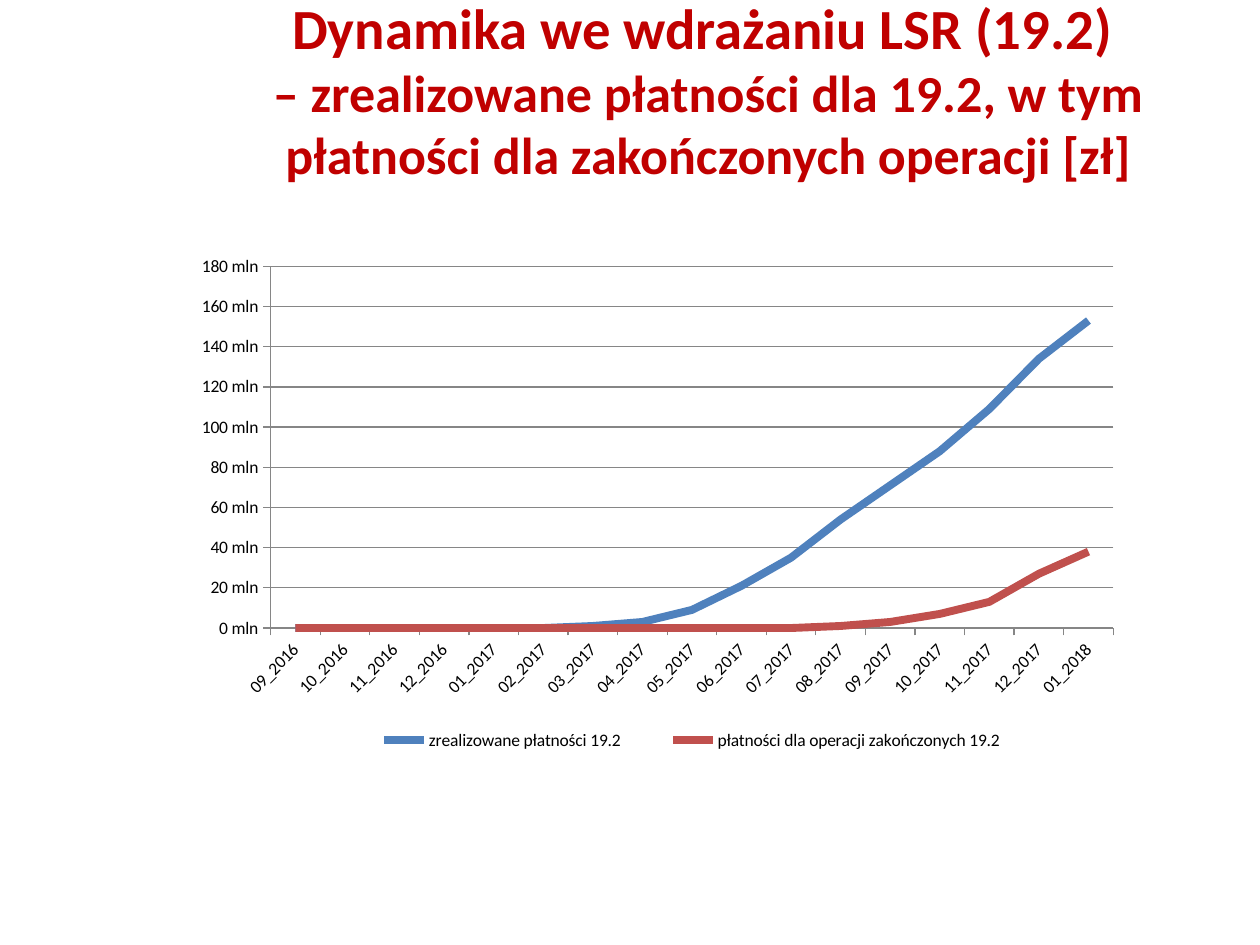
import pptx
import pptx.chart.data
import pptx.dml.color
import pptx.enum.chart
import pptx.enum.text
import pptx.oxml
import pptx.oxml.ns
import pptx.util
from pptx.util import Inches

TITLE_LEAD = "Dynamika we wdrażaniu LSR (19.2) "
TITLE_REST = "– zrealizowane płatności dla 19.2, w tym płatności dla zakończonych operacji [zł]"

MONTHS = [
    "09_2016", "10_2016", "11_2016", "12_2016", "01_2017", "02_2017",
    "03_2017", "04_2017", "05_2017", "06_2017", "07_2017", "08_2017",
    "09_2017", "10_2017", "11_2017", "12_2017", "01_2018",
]
MILLION = 1_000_000
PAYMENTS = [  # name, values in millions, theme colour
    ("zrealizowane płatności 19.2",
     [0, 0, 0, 0, 0, 0, 1, 3, 9, 21, 35, 54, 71, 88, 109, 134, 153], "all_paid"),
    ("płatności dla operacji zakończonych 19.2",
     [0, 0, 0, 0, 0, 0, 0, 0, 0, 0, 0, 1, 3, 7, 13, 27, 38], "completed"),
]

THEME = {
    "font": "Calibri",
    "title": "C00000", "text": "000000", "grid": "868686",
    "all_paid": "4F81BD", "completed": "C0504D",
    "lead_size": 32.4, "rest_size": 29.7, "chart_size": 10,
    "series_width": 4.5, "grid_width": 0.75,
}


def colour(name):
    return pptx.dml.color.RGBColor.from_string(THEME[name])


def style_line(line, colour_name, width_name):
    line.color.rgb = colour(colour_name)
    line.width = pptx.util.Pt(THEME[width_name])


def manual_layout(x, y, w, h, inner=False):
    """Return a c:layout element placed in fractions of the chart area."""
    target = '<c:layoutTarget val="inner"/>' if inner else ""
    modes = "".join(f'<c:{axis}Mode val="edge"/>' for axis in "xy")
    sizes = "".join(f'<c:{key} val="{value}"/>'
                    for key, value in zip("xywh", (x, y, w, h)))
    return pptx.oxml.parse_xml(
        f'<c:layout {pptx.oxml.ns.nsdecls("c")}>'
        f"<c:manualLayout>{target}{modes}{sizes}</c:manualLayout></c:layout>")


def add_title(slide):
    box = slide.shapes.add_textbox(Inches(1.33), Inches(0.08), Inches(8.59), Inches(1.7))
    frame = box.text_frame
    frame.word_wrap = True
    frame.vertical_anchor = pptx.enum.text.MSO_ANCHOR.MIDDLE
    frame.margin_bottom = Inches(0.5)
    heading = frame.paragraphs[0]
    heading.alignment = pptx.enum.text.PP_ALIGN.CENTER
    heading.font.name = THEME["font"]
    heading.font.bold = True
    heading.font.color.rgb = colour("title")
    lead = heading.add_run()
    lead.text = TITLE_LEAD
    lead.font.size = pptx.util.Pt(THEME["lead_size"])
    heading.add_line_break()
    rest = heading.add_run()
    rest.text = TITLE_REST
    rest.font.size = pptx.util.Pt(THEME["rest_size"])


def add_payment_chart(slide):
    data = pptx.chart.data.CategoryChartData()
    data.categories = MONTHS
    for name, millions, _ in PAYMENTS:
        data.add_series(name, [value * MILLION for value in millions])
    chart = slide.shapes.add_chart(
        pptx.enum.chart.XL_CHART_TYPE.LINE,
        Inches(1.54), Inches(1.94), Inches(7.6), Inches(4.35), data).chart

    chart.has_title = False
    chart.font.name = THEME["font"]
    chart.font.size = pptx.util.Pt(THEME["chart_size"])
    chart.font.color.rgb = colour("text")

    plot = chart.plots[0]
    plot.vary_by_categories = False
    for series, (_, _, colour_name) in zip(plot.series, PAYMENTS):
        series.smooth = False
        series.marker.style = pptx.enum.chart.XL_MARKER_STYLE.NONE
        style_line(series.format.line, colour_name, "series_width")

    amounts, months = chart.value_axis, chart.category_axis
    for axis in (amounts, months):
        axis.major_tick_mark = pptx.enum.chart.XL_TICK_MARK.OUTSIDE
        style_line(axis.format.line, "grid", "grid_width")
    amounts.minimum_scale = 0
    amounts.maximum_scale = 180 * MILLION
    amounts.major_unit = 20 * MILLION
    amounts.tick_labels.number_format = '#,##0,," mln"'
    amounts.tick_labels.number_format_is_linked = False
    amounts.has_major_gridlines = True
    style_line(amounts.major_gridlines.format.line, "grid", "grid_width")

    months.tick_labels.font.size = pptx.util.Pt(THEME["chart_size"])
    months_body = months._element.find(
        f'{pptx.oxml.ns.qn("c:txPr")}/{pptx.oxml.ns.qn("a:bodyPr")}')
    months_body.set("rot", str(-45 * 60000))
    months_body.set("vert", "horz")

    chart.has_legend = True
    legend = chart.legend
    legend.position = pptx.enum.chart.XL_LEGEND_POSITION.BOTTOM
    legend.include_in_layout = False
    layout_tag = pptx.oxml.ns.qn("c:layout")
    for old in legend._element.findall(layout_tag):
        legend._element.remove(old)
    legend._element.find(pptx.oxml.ns.qn("c:legendPos")).addnext(
        manual_layout(0.15, 0.87, 0.74, 0.07))

    plot_area = chart._chartSpace.chart.plotArea
    for old in plot_area.findall(layout_tag):
        plot_area.remove(old)
    plot_area.insert(0, manual_layout(0.08, 0.04, 0.88, 0.66, inner=True))


def main():
    deck = pptx.Presentation()
    deck.slide_width, deck.slide_height = Inches(10), Inches(7.5)
    slide = deck.slides.add_slide(deck.slide_layouts[6])
    add_title(slide)
    add_payment_chart(slide)
    deck.save("out.pptx")


if __name__ == "__main__":
    main()
